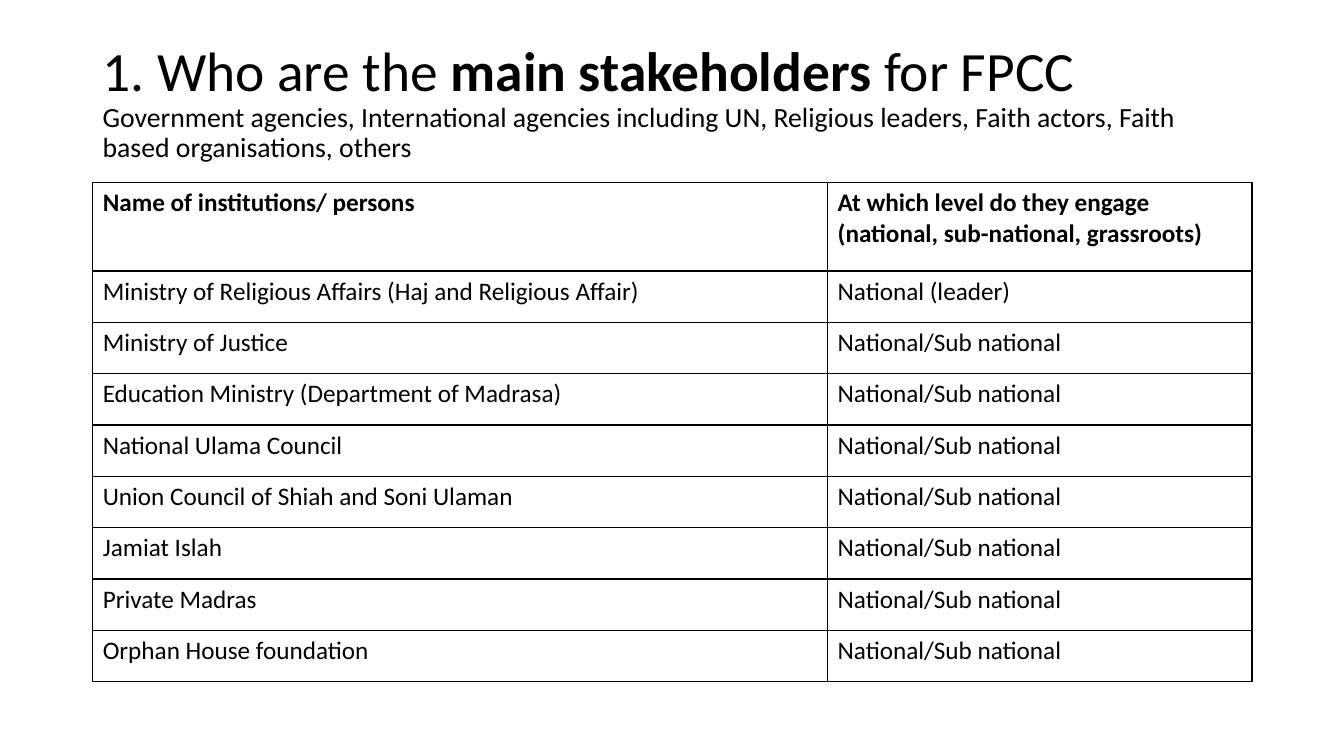
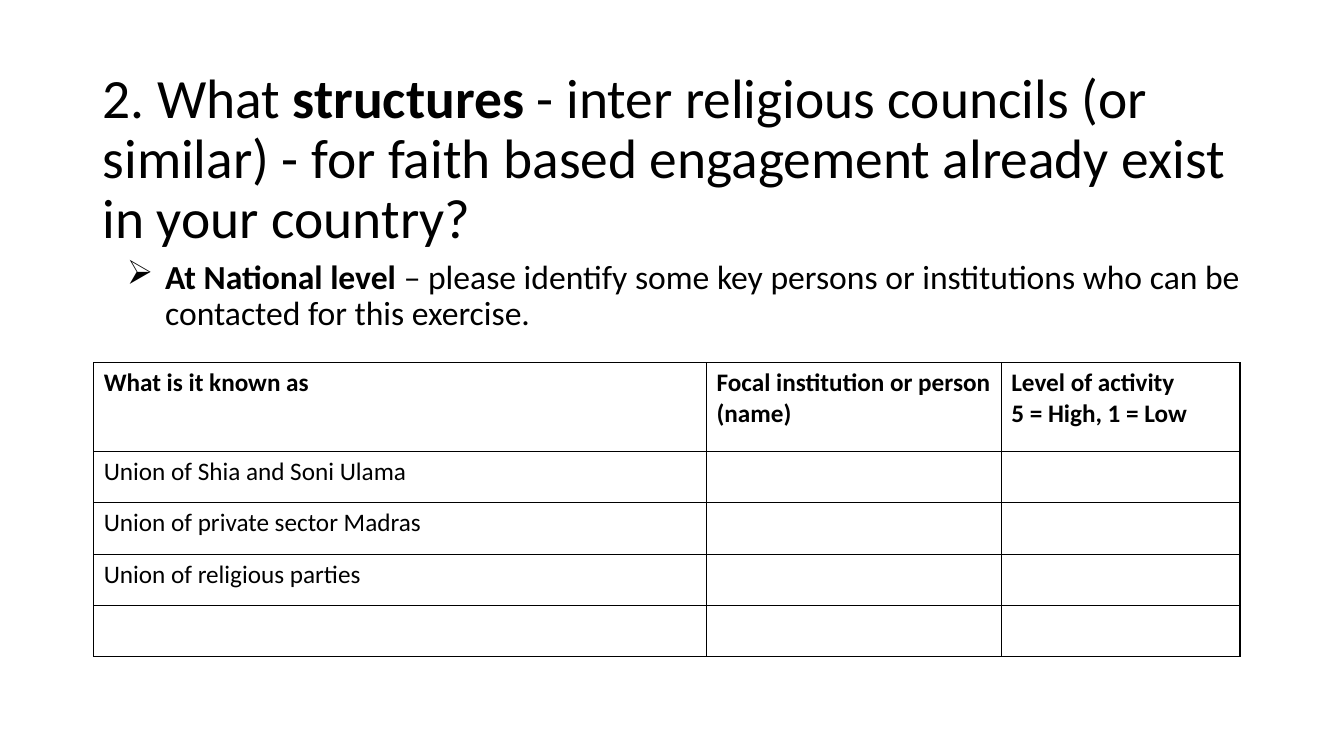
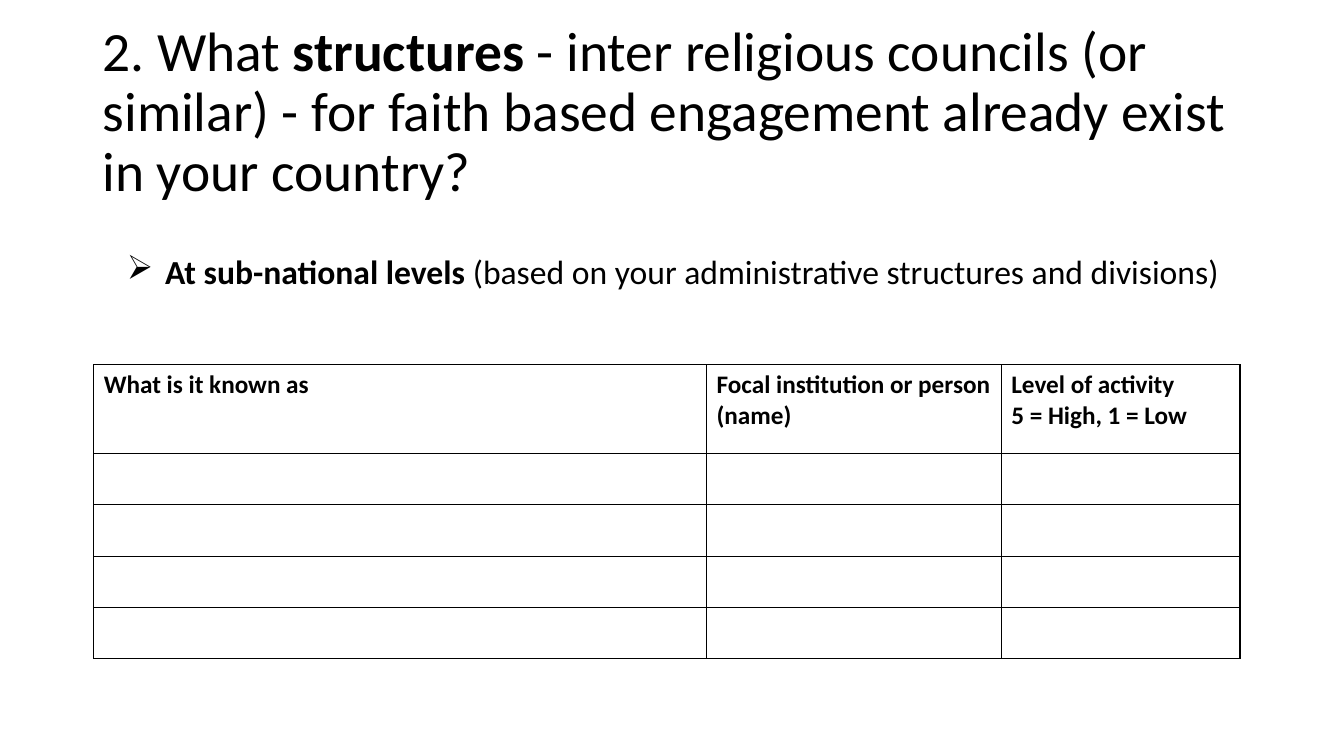
import pptx
import pptx.util
import pptx.dml.color
import pptx.enum.text
import pptx.oxml
import pptx.oxml.ns

WIDE, HIGH = pptx.util.Inches(13.33), pptx.util.Inches(7.5)
HUES = {"ink": "000000", "line": "000000"}
FONT = "Calibri"
SIZES = {"title": 39.6, "sub": 19.8, "point": 24, "cell": 18}
LEFT, SPAN = 6.9, 86.25
HEAD, ROW = 11.73, 6.79
BREAK = "\n"

ASK = [("2. What ", False), ("structures", True),
       (" - inter religious councils (or similar) - for faith based "
        "engagement already exist in your country?", False)]
FORM = ["What is it known as", "Focal institution or person (name)",
        "Level of activity\n5 = High, 1 = Low"]
FORM_COLS = [45.6, 21.93, 17.77]
FORM_LEFT = 6.97
BOTH = "National/Sub national"


def across(part):
    """Turn a percentage of the slide's width into a length."""
    return round(WIDE * part / 100)


def down(part):
    """Turn a percentage of the slide's height into a length."""
    return round(HIGH * part / 100)


def style(run, size, bold=False):
    """Give a run the shared font and colour."""
    font = run.font
    font.name, font.size, font.bold = FONT, pptx.util.Pt(size), bold
    font.color.rgb = pptx.dml.color.RGBColor.from_string(HUES["ink"])


def pour(para, parts, size):
    """Add runs of plain and bold text to a paragraph."""
    para.line_spacing = 0.9
    for text, bold in parts:
        run = para.add_run()
        run.text = text
        style(run, size, bold)


def box(slide, top, tall):
    """Add an empty wrapping text box across the content width."""
    shape = slide.shapes.add_textbox(
        across(LEFT), down(top), across(SPAN), down(tall))
    frame = shape.text_frame
    frame.word_wrap = True
    frame.auto_size = pptx.enum.text.MSO_AUTO_SIZE.NONE
    return frame


def title(slide, top, tall, parts, sub=None):
    """Add a slide title with an optional smaller line below."""
    frame = box(slide, top, tall)
    frame.vertical_anchor = pptx.enum.text.MSO_ANCHOR.MIDDLE
    para = frame.paragraphs[0]
    pour(para, parts, SIZES["title"])
    if sub:
        para.add_line_break()
        pour(para, [(sub, False)], SIZES["sub"])


def point(slide, top, tall, parts):
    """Add a line of text with an arrow bullet."""
    para = box(slide, top, tall).paragraphs[0]
    pour(para, parts, SIZES["point"])
    para.space_before = pptx.util.Pt(5)
    props = para._p.get_or_add_pPr()
    props.set("marL", str(pptx.util.Inches(0.62)))
    props.set("indent", str(pptx.util.Inches(-0.38)))
    mark = pptx.oxml.parse_xml(
        f'<a:buChar {pptx.oxml.ns.nsdecls("a")} char="➢"/>')
    props.append(mark)


def frame_cell(cell):
    """Draw a thin line on each side of a cell and clear its fill."""
    props = cell._tc.get_or_add_tcPr()
    for side in "LRTB":
        props.append(pptx.oxml.parse_xml(
            f'<a:ln{side} {pptx.oxml.ns.nsdecls("a")} w="12700"><a:solidFill>'
            f'<a:srgbClr val="{HUES["line"]}"/></a:solidFill></a:ln{side}>'))
    cell.fill.background()


def grid(slide, left, top, cols, rows):
    """Add a ruled table whose first row is bold."""
    tall = HEAD + ROW * (len(rows) - 1)
    table = slide.shapes.add_table(
        len(rows), len(cols), across(left), down(top),
        across(sum(cols)), down(tall)).table
    table.first_row = table.horz_banding = False
    for col, wide in zip(table.columns, cols):
        col.width = across(wide)
    for i, texts in enumerate(rows):
        table.rows[i].height = down(ROW if i else HEAD)
        for j, text in enumerate(texts):
            cell = table.cell(i, j)
            frame_cell(cell)
            cell.text_frame.text = text
            for para in cell.text_frame.paragraphs:
                for run in para.runs:
                    style(run, SIZES["cell"], i == 0)


def form(slide, top, names):
    """Add the structures form with one row for each name."""
    rows = [FORM] + [[name, "", ""] for name in names]
    grid(slide, FORM_LEFT, top, FORM_COLS, rows)


def main():
    """Build the three slides and save them."""
    deck = pptx.Presentation()
    deck.slide_width, deck.slide_height = WIDE, HIGH
    who, main_level, sub_level = [
        deck.slides.add_slide(deck.slide_layouts[6]) for _ in range(3)]

    title(who, 6.93, 13.6,
          [("1. Who are the ", False), ("main stakeholders", True),
           (" for FPCC", False)],
          "Government agencies, International agencies including UN, "
          "Religious leaders, Faith actors, Faith based organisations, others")
    names = ["Ministry of Justice", "Education Ministry (Department of Madrasa)",
             "National Ulama Council", "Union Council of Shiah and Soni Ulaman",
             "Jamiat Islah", "Private Madras", "Orphan House foundation"]
    grid(who, LEFT, 24.13, [54.68, 31.57], [
        ["Name of institutions/ persons",
         "At which level do they engage\n(national, sub-national, grassroots)"],
        ["Ministry of Religious Affairs (Haj and Religious Affair)",
         "National (leader)"],
        *[[name, BOTH] for name in names]])

    title(main_level, 11.6, 19.33, ASK)
    point(main_level, 33.73, 11.47, [
        ("At National level", True),
        (" – please identify some key persons or institutions who can be "
         "contacted for this exercise.", False)])
    form(main_level, 48, ["Union of Shia and Soni Ulama",
                          "Union of private sector Madras",
                          "Union of religious parties", ""])

    title(sub_level, 5.33, 19.33, ASK)
    point(sub_level, 33.07, 8.13, [
        ("At sub-national levels", True),
        (" (based on your administrative structures and divisions)", False)])
    form(sub_level, 48.27, [""] * 4)
    deck.save("out.pptx")


if __name__ == "__main__":
    main()
